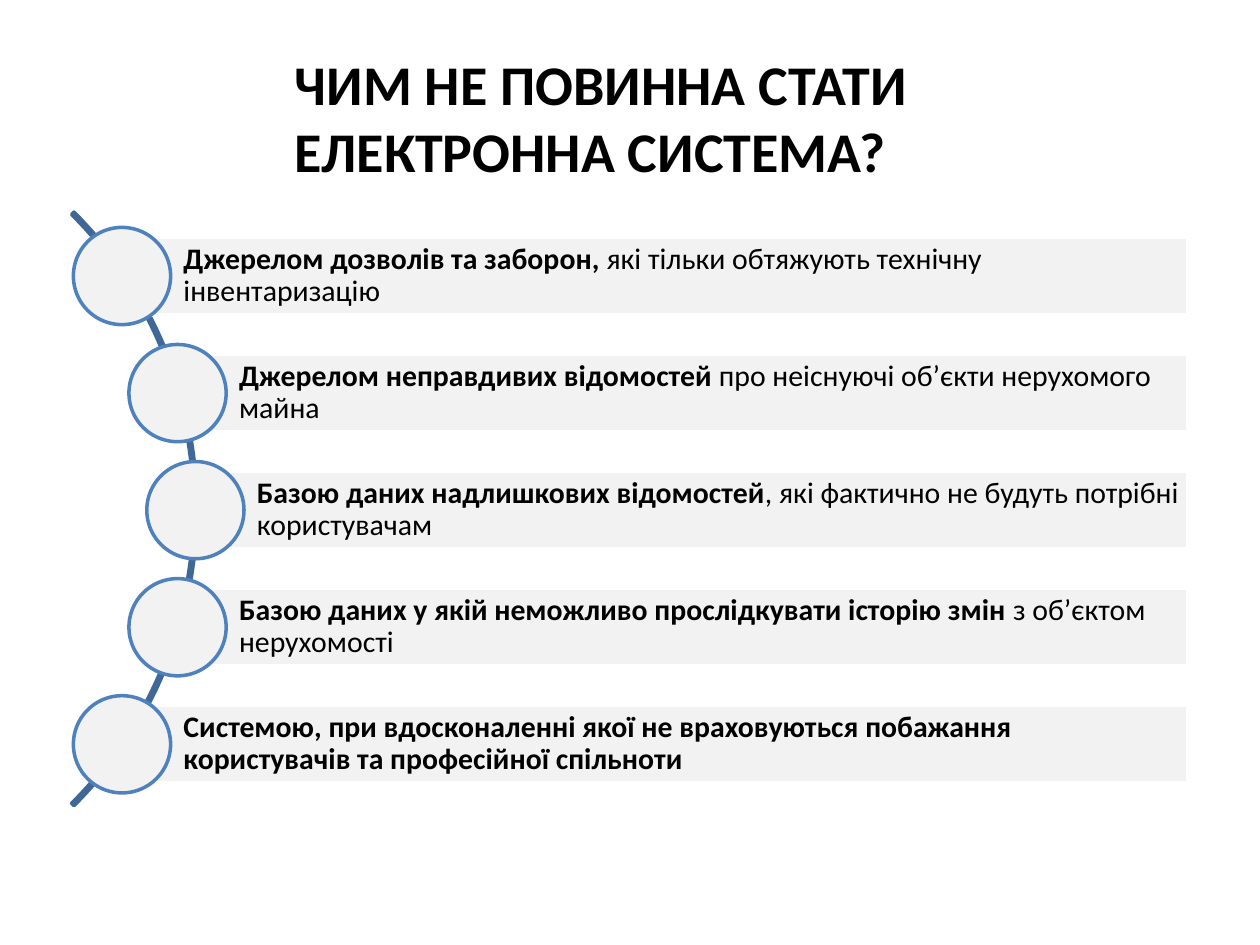
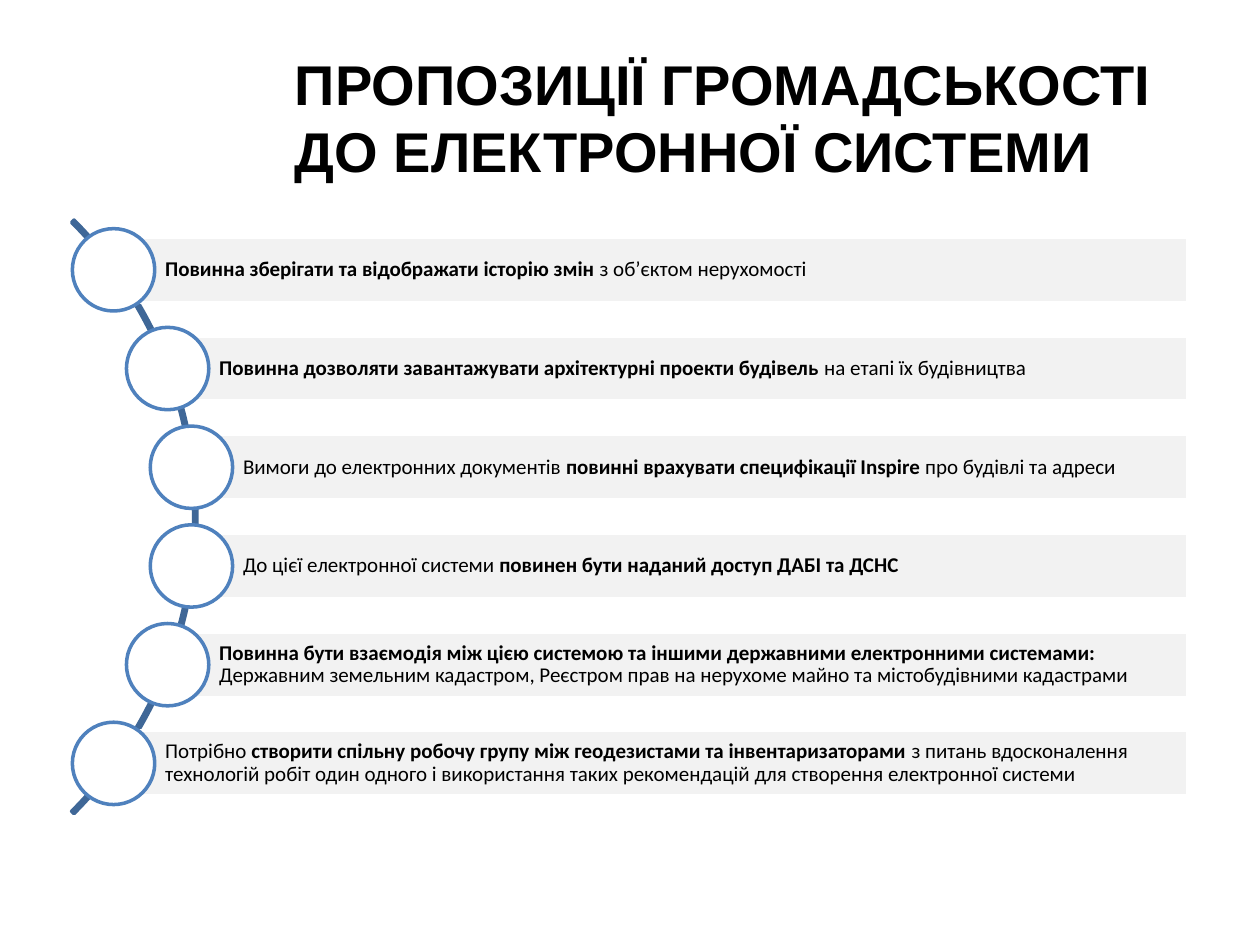
from pptx import Presentation
from pptx.dml.color import RGBColor
from pptx.enum.shapes import MSO_SHAPE
from pptx.enum.text import MSO_ANCHOR, MSO_AUTO_SIZE, PP_ALIGN
from pptx.util import Cm, Pt

ARC, BAR, DISC = MSO_SHAPE.BLOCK_ARC, MSO_SHAPE.RECTANGLE, MSO_SHAPE.OVAL
LEFT, MIDDLE, NO_AUTOFIT = PP_ALIGN.LEFT, MSO_ANCHOR.MIDDLE, MSO_AUTO_SIZE.NONE

BLACK = RGBColor(0x00, 0x00, 0x00)
WHITE = RGBColor(0xFF, 0xFF, 0xFF)
GREY = RGBColor(0xF2, 0xF2, 0xF2)
BLUE = RGBColor(0x4F, 0x81, 0xBD)
DARK_BLUE = RGBColor(0x3F, 0x67, 0x97)

BODY_FONT = "Calibri"
TITLE_BOX = {"left": Cm(5.69), "top": Cm(0.76), "width": Cm(18.44), "height": Cm(3.18)}
ARC_LEFT, ARC_SIZE = -12.95, 16.92
ARC_ADJUSTMENTS = (189, 27, 0.004)
FIRST_BAR_TOP, BAR_RIGHT = 4.78, 23.95

# Each item is a list of (text, bold) pieces.
SLIDES = [
    {
        "title": "ЧИМ НЕ ПОВИННА СТАТИ ЕЛЕКТРОННА СИСТЕМА?",
        "title_font": "Calibri",
        "items": [
            [("Джерелом дозволів та заборон, ", True),
             ("які тільки обтяжують технічну інвентаризацію", False)],
            [("Джерелом неправдивих відомостей ", True),
             ("про неіснуючі об’єкти нерухомого майна", False)],
            [("Базою даних надлишкових відомостей", True),
             (", які фактично не будуть потрібні користувачам", False)],
            [("Базою даних у якій неможливо прослідкувати історію змін ", True),
             ("з об’єктом нерухомості", False)],
            [("Системою, при вдосконаленні якої не враховуються побажання "
              "користувачів та професійної спільноти", True)],
        ],
        "arc_top": 1.8, "bar_lefts": (2.46, 3.58, 3.94), "pitch": 2.36,
        "bar_height": 1.57, "disc_size": 1.96, "disc_fill": GREY,
        "indent": 1.24, "inset": 0.12, "size": 17,
    },
    {
        "title": "ПРОПОЗИЦІЇ ГРОМАДСЬКОСТІ ДО ЕЛЕКТРОННОЇ СИСТЕМИ",
        "title_font": "Arial",
        "items": [
            [("Повинна зберігати та відображати історію змін", True),
             (" з об’єктом нерухомості", False)],
            [("Повинна дозволяти завантажувати архітектурні проекти будівель ", True),
             ("на етапі їх будівництва", False)],
            [("Вимоги до електронних документів ", False),
             ("повинні врахувати специфікації Inspire ", True),
             ("про будівлі та адреси", False)],
            [("До цієї електронної системи ", False),
             ("повинен бути наданий доступ ДАБІ та ДСНС", True)],
            [("Повинна бути взаємодія між цією системою та іншими державними "
              "електронними системами:", True),
             (" Державним земельним кадастром, Реєстром прав на нерухоме майно "
              "та містобудівними кадастрами", False)],
            [("Потрібно ", False),
             ("створити спільну робочу групу між геодезистами та інвентаризаторами", True),
             (" з питань вдосконалення технологій робіт один одного і використання "
              "таких рекомендацій для створення електронної системи", False)],
        ],
        "arc_top": 1.96, "bar_lefts": (2.29, 3.38, 3.86), "pitch": 1.99,
        "bar_height": 1.32, "disc_size": 1.66, "disc_fill": WHITE,
        "indent": 1.04, "inset": 0.08, "size": 12,
    },
]


def apply(target, values):
    for name, value in values.items():
        setattr(target, name, value)


def add_outlined(slide, kind, box, fill, outline):
    part = slide.shapes.add_shape(kind, *(Cm(length) for length in box))
    part.shadow.inherit = False
    part.fill.solid()
    part.fill.fore_color.rgb = fill
    part.line.color.rgb = outline
    part.line.width = Pt(2)
    return part


def write(paragraph, pieces, font_name, size):
    paragraph.alignment = LEFT
    for text, bold in pieces:
        run = paragraph.add_run()
        run.text = text
        apply(run.font, {"name": font_name, "size": Pt(size), "bold": bold})
        run.font.color.rgb = BLACK


def add_title(slide, text, font_name):
    title = slide.shapes.title
    apply(title, TITLE_BOX)
    apply(title.text_frame, {"vertical_anchor": MIDDLE, "auto_size": NO_AUTOFIT,
                             "word_wrap": True})
    write(title.text_frame.paragraphs[0], [(text, True)], font_name, 32)


def add_item(slide, content, index, pieces):
    mirrored = min(index, len(content["items"]) - 1 - index)
    left = content["bar_lefts"][mirrored]
    top = FIRST_BAR_TOP + index * content["pitch"]
    height, disc_size = content["bar_height"], content["disc_size"]
    bar = add_outlined(slide, BAR, (left, top, BAR_RIGHT - left, height), GREY, WHITE)
    inset = Cm(content["inset"])
    apply(bar.text_frame, {"margin_left": Cm(content["indent"]), "margin_right": inset,
                           "margin_top": inset, "margin_bottom": inset,
                           "vertical_anchor": MIDDLE, "word_wrap": True})
    paragraph = bar.text_frame.paragraphs[0]
    paragraph.line_spacing = 0.9
    write(paragraph, pieces, BODY_FONT, content["size"])
    disc_top = top + (height - disc_size) / 2
    add_outlined(slide, DISC, (left - disc_size / 2, disc_top, disc_size, disc_size),
                 content["disc_fill"], BLUE)


def main():
    deck = Presentation()
    apply(deck, {"slide_width": Cm(25.4), "slide_height": Cm(19.05)})
    title_only = deck.slide_layouts[5]
    for content in SLIDES:
        slide = deck.slides.add_slide(title_only)
        add_title(slide, content["title"], content["title_font"])
        arc = add_outlined(slide, ARC, (ARC_LEFT, content["arc_top"], ARC_SIZE, ARC_SIZE),
                           content["disc_fill"], DARK_BLUE)
        for index, value in enumerate(ARC_ADJUSTMENTS):
            arc.adjustments[index] = value
        for index, pieces in enumerate(content["items"]):
            add_item(slide, content, index, pieces)
    deck.save("out.pptx")


if __name__ == "__main__":
    main()
